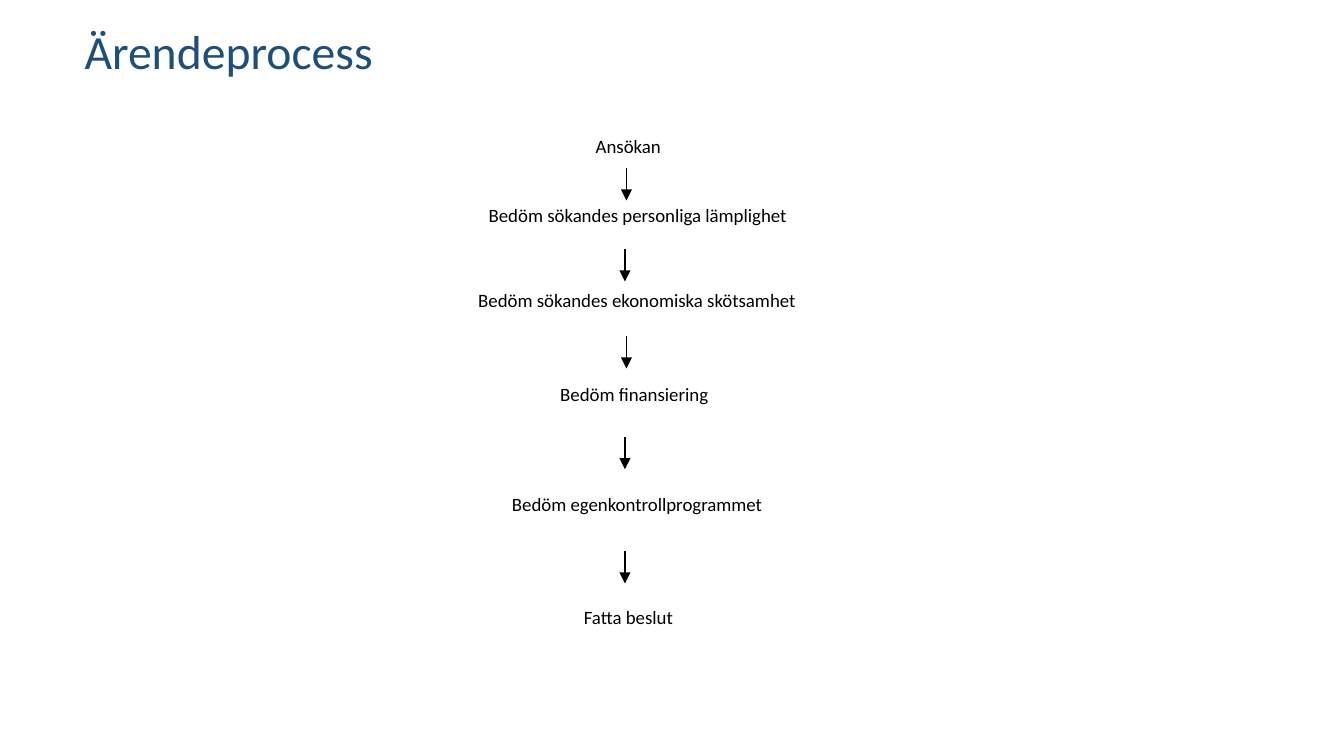
from lxml import etree
from pptx import Presentation
from pptx.dml.color import RGBColor
from pptx.enum import shapes, text
from pptx.oxml import ns
from pptx.util import Pt

COLORS = {"title": "1F4E79", "ink": "000000"}
STEP_HEIGHT = 19.4
ARROW_LENGTH = 17.4

# Wording, left, top, width
STEPS = [
    ("Ansökan", 256.3, 68.4, 160.6),
    ("Bedöm sökandes personliga lämplighet", 223.2, 105.8, 236.9),
    ("Bedöm sökandes ekonomiska skötsamhet", 213.1, 151.2, 256.3),
    ("Bedöm finansiering", 256.3, 201.6, 167),
    ("Bedöm egenkontrollprogrammet", 230.4, 260.6, 221.8),
    ("Fatta beslut", 268.6, 321.1, 136.1),
]
# Horizontal position, top
ARROWS = [(335.6, 90), (334.8, 133.4), (335.6, 180), (334.8, 234), (334.8, 295.2)]

TITLE_FORMAT = {
    "frame": {"vertical_anchor": text.MSO_ANCHOR.MIDDLE},
    "paragraph": {"line_spacing": 0.9},
    "font": {"size": Pt(25.5), "name": "Calibri"},
    "color": "title",
}
STEP_FORMAT = {
    "frame": {"vertical_anchor": text.MSO_ANCHOR.TOP},
    "paragraph": {"alignment": text.PP_ALIGN.CENTER},
    "font": {"size": Pt(10.1), "name": "Calibri"},
    "color": "ink",
}


def set_attributes(target, values):
    for name, value in values.items():
        setattr(target, name, value)


def add_text(slide, wording, left, top, width, height, style):
    box = slide.shapes.add_textbox(Pt(left), Pt(top), Pt(width), Pt(height))
    frame = box.text_frame
    frame.word_wrap = True
    set_attributes(frame, style["frame"])
    paragraph = frame.paragraphs[0]
    set_attributes(paragraph, style["paragraph"])
    run = paragraph.add_run()
    run.text = wording
    set_attributes(run.font, style["font"])
    run.font.color.rgb = RGBColor.from_string(COLORS[style["color"]])


def add_down_arrow(slide, x, top):
    arrow = slide.shapes.add_connector(
        shapes.MSO_CONNECTOR.STRAIGHT, Pt(x), Pt(top), Pt(x), Pt(top + ARROW_LENGTH)
    )
    arrow.line.width = Pt(1)
    arrow.line.color.rgb = RGBColor.from_string(COLORS["ink"])
    etree.SubElement(arrow.line._get_or_add_ln(), ns.qn("a:tailEnd"), type="triangle")
    etree.SubElement(arrow._element.spPr, ns.qn("a:effectLst"))


def main():
    presentation = Presentation()
    presentation.slide_width = Pt(720)
    presentation.slide_height = Pt(405)
    slide = presentation.slides.add_slide(presentation.slide_layouts[6])

    add_text(slide, "Ärendeprocess", 38.2, 10.8, 657.4, 36, TITLE_FORMAT)
    for wording, left, top, width in STEPS:
        add_text(slide, wording, left, top, width, STEP_HEIGHT, STEP_FORMAT)
    for x, top in ARROWS:
        add_down_arrow(slide, x, top)

    presentation.save("out.pptx")


if __name__ == "__main__":
    main()
